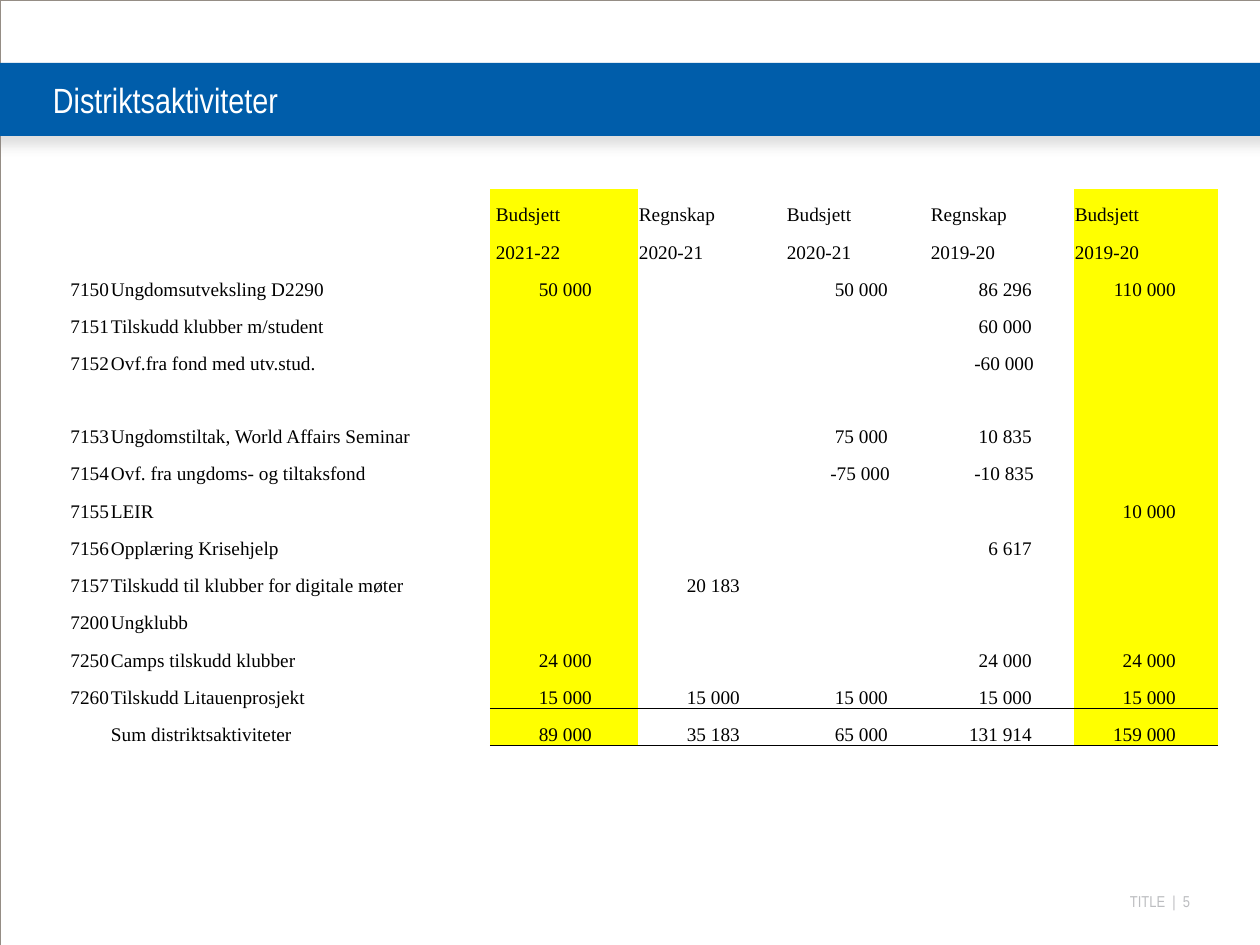
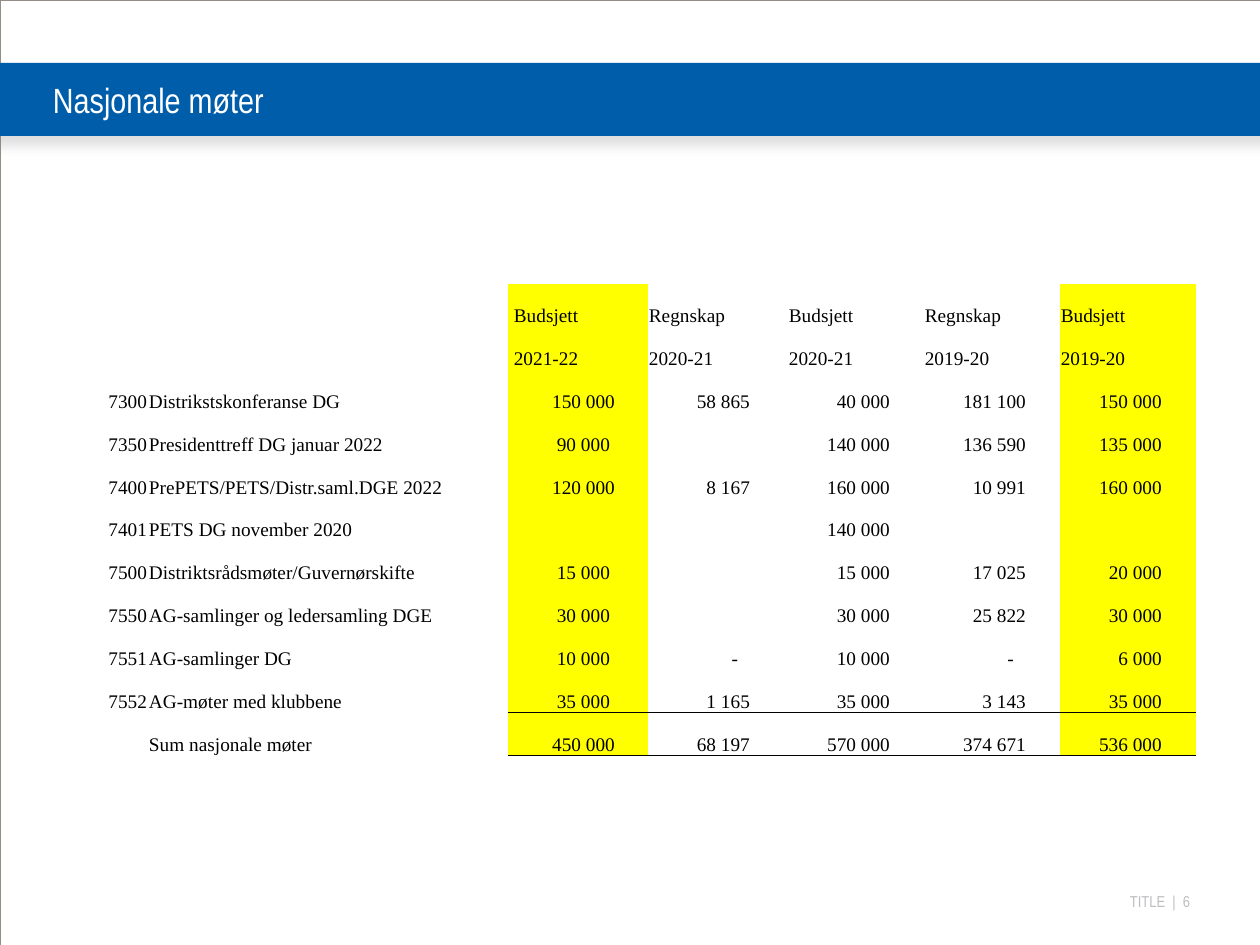
from dataclasses import dataclass

from lxml import etree
from pptx import Presentation
from pptx import util as u
from pptx.dml.color import RGBColor
from pptx.enum import shapes, text
from pptx.oxml import ns

PX = 914400 / 126
NO_STYLE = "{2D5ABB26-0587-4C30-8999-92F81FD0307C}"


@dataclass(frozen=True)
class Theme:
    band: str = "005DAA"
    frame: str = "958D85"
    shadow: str = "808080"
    white: str = "FFFFFF"
    ink: str = "000000"
    footer: str = "BCBDC0"
    highlight: str = "FFFF00"
    sans: str = "Arial Narrow"
    serif: str = "Times New Roman"
    title_size: int = 20
    table_size: int = 11
    footer_size: int = 9


T = Theme()

TITLE_BOX = (53, 63, 1207, 73)
BAND_BOX = (-10, 63, 1281, 73)
FRAME_BOX = (0, 0, 1260, 945)
FOOTER_BOX = (977, 892, 220, 19)

HEADERS = [
    ("", "", "Budsjett", "Regnskap", "Budsjett", "Regnskap", "Budsjett"),
    ("", "", "2021-22", "2020-21", "2020-21", "2019-20", "2019-20"),
]

DISTRICT_ROWS = [
    ("7150", "Ungdomsutveksling D2290", 50000, None, 50000, 86296, 110000),
    ("7151", "Tilskudd klubber m/student", None, None, None, 60000, None),
    ("7152", "Ovf.fra fond med utv.stud.", None, None, None, -60000, None),
    ("7153", "Ungdomstiltak, World Affairs Seminar", None, None, 75000, 10835, None),
    ("7154", "Ovf. fra ungdoms- og tiltaksfond", None, None, -75000, -10835, None),
    ("7155", "LEIR", None, None, None, None, 10000),
    ("7156", "Opplæring Krisehjelp", None, None, None, 6617, None),
    ("7157", "Tilskudd til klubber for digitale møter", None, 20183, None, None, None),
    ("7200", "Ungklubb", None, None, None, None, None),
    ("7250", "Camps tilskudd klubber", 24000, None, None, 24000, 24000),
    ("7260", "Tilskudd Litauenprosjekt", 15000, 15000, 15000, 15000, 15000),
    ("", "Sum distriktsaktiviteter", 89000, 35183, 65000, 131914, 159000),
]

MEETING_ROWS = [
    ("7300", "Distrikstskonferanse DG", 150000, 58865, 40000, 181100, 150000),
    ("7350", "Presidenttreff DG januar 2022", 90000, None, 140000, 136590, 135000),
    ("7400", "PrePETS/PETS/Distr.saml.DGE 2022", 120000, 8167, 160000, 10991, 160000),
    ("7401", "PETS DG november 2020", None, None, 140000, None, None),
    ("7500", "Distriktsrådsmøter/Guvernørskifte", 15000, None, 15000, 17025, 20000),
    ("7550", "AG-samlinger og ledersamling DGE", 30000, None, 30000, 25822, 30000),
    ("7551", "AG-samlinger DG", 10000, 0, 10000, 0, 6000),
    ("7552", "AG-møter med klubbene", 35000, 1165, 35000, 3143, 35000),
    ("", "Sum nasjonale møter", 450000, 68197, 570000, 374671, 536000),
]

# Table box, column widths and any taller rows go with each slide
SLIDES = [
    dict(title="Distriktsaktiviteter", number=5, rows=DISTRICT_ROWS,
         box=(42, 189, 1176, 557), tall={5: 73},
         widths=(68, 364, 16, 148, 148, 144, 144, 144)),
    dict(title="Nasjonale møter", number=6, rows=MEETING_ROWS,
         box=(84, 284, 1112, 472), tall={},
         widths=(64, 344, 16, 140, 140, 136, 136, 136)),
]


def px(n):
    return u.Emu(round(n * PX))


def place(box):
    return [px(n) for n in box]


def rgb(value):
    return RGBColor.from_string(value)


def apply(obj, values):
    for name, value in values.items():
        setattr(obj, name, value)


def frame_format(anchor, left=0, right=0):
    return dict(margin_left=px(left), margin_right=px(right), margin_top=0,
                margin_bottom=0, vertical_anchor=anchor)


def write(tf, words, name, size, color, align):
    p = tf.paragraphs[0]
    p.alignment = align
    r = p.add_run()
    r.text = words
    apply(r.font, dict(name=name, size=u.Pt(size), bold=False))
    r.font.color.rgb = rgb(color)


def color_xml(parent, value):
    return etree.SubElement(parent, ns.qn("a:srgbClr"), val=value)


# Frame and band, moved to the layout so that every slide shows them
def add_backdrop(s, layout):
    frame = s.shapes.add_shape(shapes.MSO_SHAPE.RECTANGLE, *place(FRAME_BOX))
    frame.fill.background()
    frame.line.color.rgb = rgb(T.frame)
    frame.line.width = u.Pt(0.13)
    frame.shadow.inherit = False

    band = s.shapes.add_shape(shapes.MSO_SHAPE.RECTANGLE, *place(BAND_BOX))
    band.fill.solid()
    band.fill.fore_color.rgb = rgb(T.band)
    band.line.fill.background()
    band.shadow.inherit = False
    effects = band._element.spPr.find(ns.qn("a:effectLst"))
    shadow = etree.SubElement(effects, ns.qn("a:outerShdw"), blurRad=str(u.Pt(7)),
                              dist=str(u.Pt(4.8)), dir="5400000", rotWithShape="0")
    etree.SubElement(color_xml(shadow, T.shadow), ns.qn("a:alpha"), val="25000")

    for sp in (frame, band):
        layout.shapes._spTree.append(sp._element)


def add_title(s, words):
    sp = s.shapes.title
    apply(sp, dict(zip(("left", "top", "width", "height"), place(TITLE_BOX))))
    tf = sp.text_frame
    apply(tf, frame_format(text.MSO_ANCHOR.MIDDLE))
    apply(tf, dict(word_wrap=True, auto_size=text.MSO_AUTO_SIZE.NONE))
    write(tf, words, T.sans, T.title_size, T.white, text.PP_ALIGN.LEFT)


def add_footer(s, number):
    tf = s.shapes.add_textbox(*place(FOOTER_BOX)).text_frame
    apply(tf, frame_format(text.MSO_ANCHOR.TOP, right=7))
    tf.word_wrap = True
    write(tf, f"TITLE  |  {number}", T.sans, T.footer_size, T.footer,
          text.PP_ALIGN.RIGHT)


def add_rule(cell, side):
    ln = etree.Element(ns.qn(f"a:ln{side}"), w=str(u.Pt(0.5)))
    color_xml(etree.SubElement(ln, ns.qn("a:solidFill")), T.ink)
    cell._tc.get_or_add_tcPr().insert(0, ln)


def amount_edge(value, col):
    """Distance from the left of the cell to the right edge of an amount."""
    if value == 0:
        return 90
    if value < 0:
        return 104
    return 107 if col == 3 and value >= 100000 else 102


def fill_cell(cell, value, col, width):
    left, right, align = 1, 1, text.PP_ALIGN.LEFT
    if isinstance(value, int):
        right, align = width - amount_edge(value, col), text.PP_ALIGN.RIGHT
        value = f"{value:,}".replace(",", " ") if value else "-"
    elif col == 0:
        align = text.PP_ALIGN.RIGHT
    elif col == 3:
        left = 6
    apply(cell, frame_format(text.MSO_ANCHOR.BOTTOM, left, right))
    if value:
        write(cell.text_frame, value, T.serif, T.table_size, T.ink, align)
    else:
        # Keeps empty cells from stretching their row
        etree.SubElement(cell.text_frame.paragraphs[0]._p, ns.qn("a:endParaRPr"),
                         sz=str(T.table_size * 100))


def add_budget_table(s, box, widths, rows, tall):
    rows = HEADERS + rows
    last = len(rows) - 1
    table = s.shapes.add_table(len(rows), len(widths), *place(box)).table
    apply(table, dict(first_row=False, horz_banding=False))
    table._tbl.tblPr.find(ns.qn("a:tableStyleId")).text = NO_STYLE
    for column, width in zip(table.columns, widths):
        column.width = px(width)
    even = (box[3] - sum(tall.values())) / (len(rows) - len(tall))

    for i, row in enumerate(rows):
        table.rows[i].height = px(tall.get(i, even))
        # The third column is a narrow gap before the amounts
        for col, value in enumerate(row[:2] + (None,) + row[2:]):
            cell = table.cell(i, col)
            fill_cell(cell, value, col, widths[col])
            if col in (3, 7):
                cell.fill.solid()
                cell.fill.fore_color.rgb = rgb(T.highlight)
            else:
                cell.fill.background()
            if col >= 3 and i >= last - 1:
                add_rule(cell, "B")
                if i == last:
                    add_rule(cell, "T")


def main():
    prs = Presentation()
    prs.slide_width, prs.slide_height = px(1260), px(945)
    layout = prs.slide_layouts[5]
    for i, page in enumerate(SLIDES):
        s = prs.slides.add_slide(layout)
        if i == 0:
            add_backdrop(s, layout)
        add_title(s, page["title"])
        add_budget_table(s, page["box"], page["widths"], page["rows"], page["tall"])
        add_footer(s, page["number"])
    prs.save("out.pptx")


if __name__ == "__main__":
    main()
